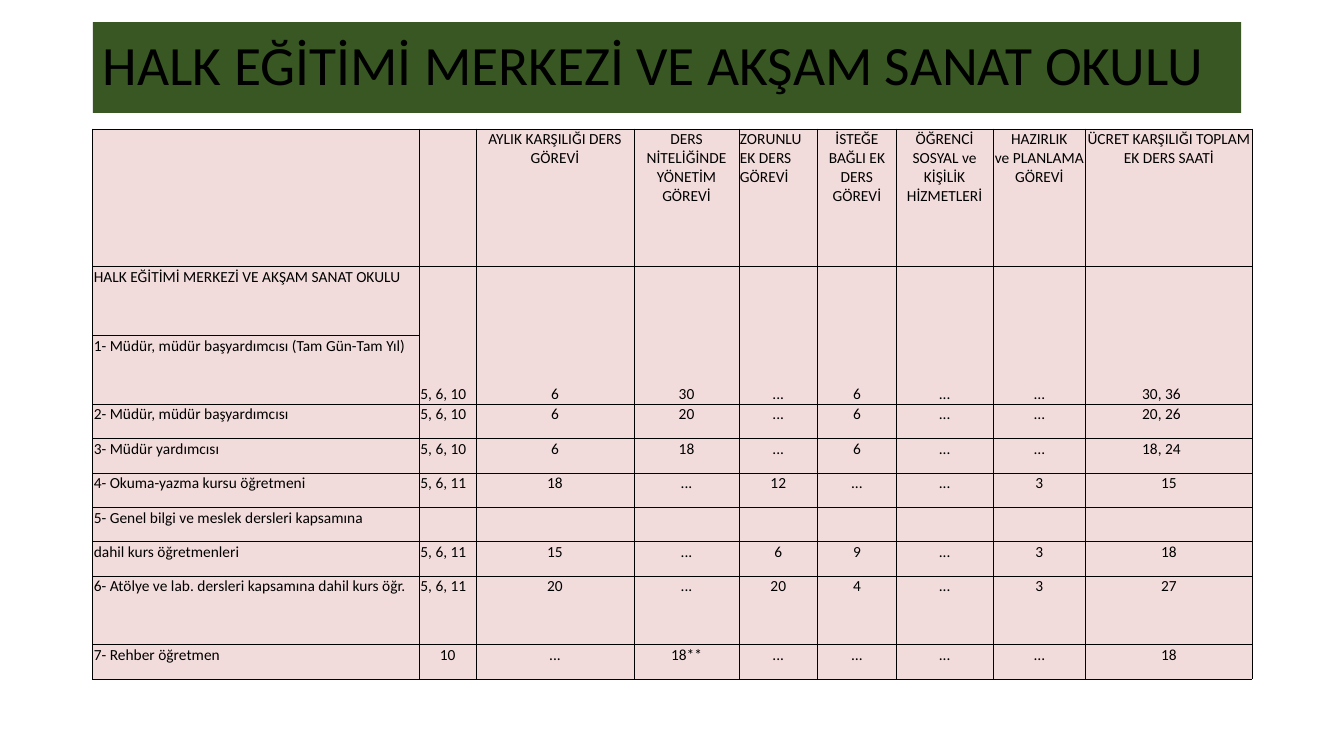
"""Build the slide with the weekly extra-lesson table of the public education centre."""
import copy

import pptx
import pptx.dml.color
import pptx.enum.text
import pptx.oxml
import pptx.oxml.ns
import pptx.util
from pptx.util import Inches

HEADING = "HALK EĞİTİMİ MERKEZİ VE AKŞAM SANAT OKULU"
DUTIES = [
    ["", "", "AYLIK KARŞILIĞI DERS GÖREVİ", "DERS NİTELİĞİNDE YÖNETİM GÖREVİ",
     "ZORUNLU EK DERS GÖREVİ", "İSTEĞE BAĞLI EK DERS GÖREVİ",
     "ÖĞRENCİ SOSYAL ve KİŞİLİK HİZMETLERİ", "HAZIRLIK\vve PLANLAMA GÖREVİ",
     "ÜCRET KARŞILIĞI TOPLAM EK DERS SAATİ"],
    [HEADING, "5, 6, 10", "6", "30", "...", "6", "...", "…", "30, 36"],
    ["1- Müdür, müdür başyardımcısı (Tam Gün-Tam Yıl)"] + [""] * 8,
    ["2- Müdür, müdür başyardımcısı", "5, 6, 10", "6", "20", "...", "6", "...", "…", "20, 26"],
    ["3- Müdür yardımcısı", "5, 6, 10", "6", "18", "...", "6", "...", "…", "18, 24"],
    ["4- Okuma-yazma kursu öğretmeni", "5, 6, 11", "18", "...", "12", "...", "...", "3", "15"],
    ["5- Genel bilgi ve meslek dersleri kapsamına"] + [""] * 8,
    ["dahil kurs öğretmenleri", "5, 6, 11", "15", "...", "6", "9", "...", "3", "18"],
    ["6- Atölye ve lab. dersleri kapsamına dahil kurs öğr.", "5, 6, 11", "20", "...", "20", "4",
     "...", "3", "27"],
    ["7- Rehber öğretmen", "10", "...", "18**", "...", "…", "...", "…", "18"],
]
COLUMN_WIDTHS = [3.24, 0.56, 1.57, 1.04, 0.78, 0.78, 0.96, 0.92, 1.65]
ROW_UNITS = [4, 2, 2, 1, 1, 1, 1, 1, 2, 1]
TABLE_LEFT, TABLE_TOP, TABLE_WIDTH, TABLE_HEIGHT = 0.92, 1.28, 11.5, 5.46
MERGED_ROW = 1
HOURS_COLUMN = 8
HOURS_INDENT = 0.56

ALIGN = pptx.enum.text.PP_ALIGN
ANCHOR = pptx.enum.text.MSO_ANCHOR


def rgb(value):
    return pptx.dml.color.RGBColor.from_string(value)


def write(frame, text, size=11, color="000000", align=ALIGN.LEFT, spacing=1.0):
    paragraph = frame.paragraphs[0]
    paragraph.text = text
    paragraph.alignment = align
    paragraph.line_spacing = spacing
    for run in paragraph.runs:
        run.font.name = "Calibri"
        run.font.size = pptx.util.Pt(size)
        run.font.color.rgb = rgb(color)
    for line_break in paragraph._p.findall(pptx.oxml.ns.qn("a:br")):
        line_break.append(copy.deepcopy(paragraph.runs[0].font._rPr))


def outline(cell, color="000000", width=0.5):
    for side in ("lnL", "lnR", "lnT", "lnB"):
        cell._tc.get_or_add_tcPr().append(pptx.oxml.parse_xml(
            f'<a:{side} {pptx.oxml.ns.nsdecls("a")} w="{pptx.util.Pt(width)}">'
            f'<a:solidFill><a:srgbClr val="{color}"/></a:solidFill></a:{side}>'))


def alignment(row, column, text):
    if column == 0 or (row, column) == (0, 4) or (column == 1 and "," in text):
        return ALIGN.LEFT
    if column == HOURS_COLUMN and "," in text:
        return ALIGN.LEFT
    return ALIGN.CENTER


def add_heading(slide):
    heading = slide.shapes.title
    heading.left, heading.top = Inches(0.92), Inches(0.22)
    heading.width, heading.height = Inches(11.39), Inches(0.9)
    heading.fill.solid()
    heading.fill.fore_color.rgb = rgb("385723")
    heading.text_frame.vertical_anchor = ANCHOR.MIDDLE
    heading.text_frame.auto_size = pptx.enum.text.MSO_AUTO_SIZE.NONE
    write(heading.text_frame, HEADING, size=39.6, spacing=0.9)


def add_duties(slide):
    duties = slide.shapes.add_table(
        len(DUTIES), len(COLUMN_WIDTHS), Inches(TABLE_LEFT), Inches(TABLE_TOP),
        Inches(TABLE_WIDTH), Inches(TABLE_HEIGHT)).table
    duties.first_row = duties.horz_banding = False
    for column, width in zip(duties.columns, COLUMN_WIDTHS):
        column.width = Inches(width)
    for row, units in zip(duties.rows, ROW_UNITS):
        row.height = Inches(TABLE_HEIGHT * units / sum(ROW_UNITS))
    for r, texts in enumerate(DUTIES):
        for c, text in enumerate(texts):
            cell = duties.cell(r, c)
            indented = c == HOURS_COLUMN and "," in text
            cell.margin_left = Inches(HOURS_INDENT if indented else 0.01)
            cell.margin_right = cell.margin_top = Inches(0.01)
            cell.margin_bottom = 0
            cell.vertical_anchor = ANCHOR.BOTTOM if r == MERGED_ROW and c else ANCHOR.TOP
            outline(cell)
            cell.fill.solid()
            cell.fill.fore_color.rgb = rgb("F2DCDB")
            write(cell.text_frame, text, align=alignment(r, c, text))
    for c in range(1, len(COLUMN_WIDTHS)):
        duties.cell(MERGED_ROW, c).merge(duties.cell(MERGED_ROW + 1, c))


def main():
    deck = pptx.Presentation()
    deck.slide_width, deck.slide_height = Inches(13.33), Inches(7.5)
    slide = deck.slides.add_slide(deck.slide_layouts[5])
    add_heading(slide)
    add_duties(slide)
    deck.save("out.pptx")


if __name__ == "__main__":
    main()
